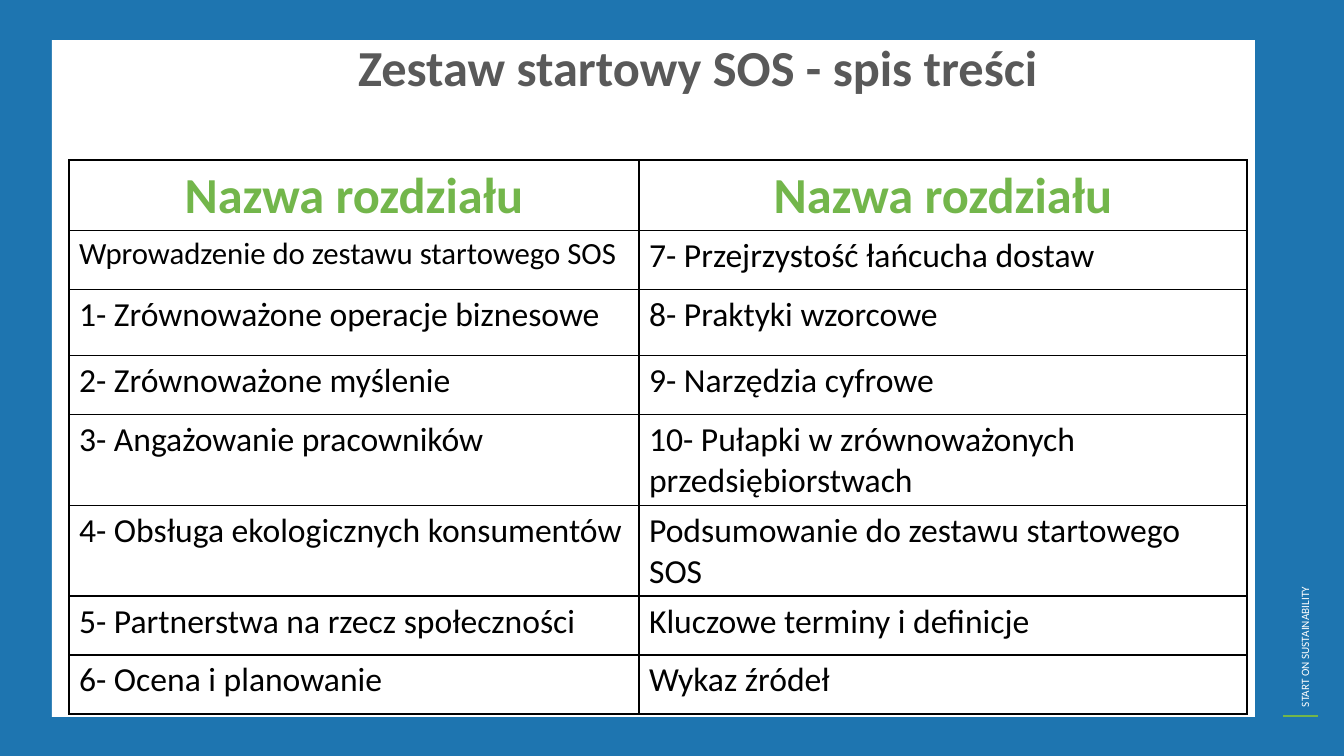
from lxml import etree
from pptx import Presentation
from pptx.dml.color import RGBColor
from pptx.enum.shapes import MSO_CONNECTOR, MSO_SHAPE
from pptx.enum.text import PP_ALIGN
from pptx.oxml.ns import qn
from pptx.util import Emu, Pt

LEFT, CENTER = PP_ALIGN.LEFT, PP_ALIGN.CENTER
RECT, LINE = MSO_SHAPE.RECTANGLE, MSO_CONNECTOR.STRAIGHT
FONT = "Calibri"
BLUE, WHITE, GREEN = "1E75B0", "FFFFFF", "73B64B"
GRAY, BLACK, EDGE = "595959", "010101", "000000"
WIDE, HIGH = 1344, 756

COLS = [570, 608]
ROWS = [59, 59, 66, 59, 64, 59, 59, 59]
HEAD = "Nazwa rozdziału"
PARTS = [
    ("Wprowadzenie do zestawu startowego SOS", "7- Przejrzystość łańcucha dostaw"),
    ("1- Zrównoważone operacje biznesowe", "8- Praktyki wzorcowe"),
    ("2- Zrównoważone myślenie", "9- Narzędzia cyfrowe"),
    ("3- Angażowanie pracowników", "10- Pułapki w zrównoważonych przedsiębiorstwach"),
    ("4- Obsługa ekologicznych konsumentów", "Podsumowanie do zestawu startowego SOS"),
    ("5- Partnerstwa na rzecz społeczności", "Kluczowe terminy i definicje"),
    ("6- Ocena i planowanie", "Wykaz źródeł"),
]


def px(size):
    return Emu(round(size * 914400 / 100.8))


def paint(color, code):
    color.rgb = RGBColor.from_string(code)


def write(frame, text, size, code, bold=False, align=LEFT):
    para = frame.paragraphs[0]
    para.alignment = align
    run = para.add_run()
    run.text = text
    run.font.name = FONT
    run.font.size = Pt(size)
    run.font.bold = bold
    paint(run.font.color, code)
    return para


def add_panel(slide, box, code):
    shape = slide.shapes.add_shape(RECT, *map(px, box))
    shape.shadow.inherit = False
    shape.fill.solid()
    paint(shape.fill.fore_color, code)
    shape.line.fill.background()


def add_text(slide, box, turn=0):
    shape = slide.shapes.add_textbox(*map(px, box))
    shape.rotation = turn
    shape.text_frame.word_wrap = True
    return shape.text_frame


def add_rule(slide, ends, code):
    line = slide.shapes.add_connector(LINE, *map(px, ends))
    paint(line.line.color, code)
    line.line.width = Pt(1)
    etree.SubElement(line.element.spPr, qn("a:effectLst"))


def add_title(slide, text):
    frame = add_text(slide, (134, 38, 1103, 89))
    para = write(frame, text, 36, GRAY, True, CENTER)
    para.line_spacing = 0.9
    para.space_before = Pt(10)
    props = para._p.get_or_add_pPr()
    props.set("marL", str(px(50)))
    props.set("indent", str(-px(25)))


def frame_cell(cell):
    props = cell._tc.get_or_add_tcPr()
    for side in ("lnL", "lnR", "lnT", "lnB"):
        line = etree.SubElement(props, qn("a:" + side), w=str(Pt(1)))
        fill = etree.SubElement(line, qn("a:solidFill"))
        etree.SubElement(fill, qn("a:srgbClr"), val=EDGE)
    cell.fill.background()


def add_grid(slide):
    box = (69, 160, sum(COLS), sum(ROWS))
    table = slide.shapes.add_table(len(ROWS), len(COLS), *map(px, box)).table
    table.first_row = table.horz_banding = False
    for col, width in zip(table.columns, COLS):
        col.width = px(width)
    for row, height in zip(table.rows, ROWS):
        row.height = px(height)
    for r, texts in enumerate([(HEAD, HEAD), *PARTS]):
        for c, text in enumerate(texts):
            cell = table.cell(r, c)
            frame_cell(cell)
            if r == 0:
                write(cell.text_frame, text, 36, GREEN, True, CENTER)
            else:
                size = 22 if (r, c) == (1, 0) else 24
                write(cell.text_frame, text, size, BLACK)


def main():
    deck = Presentation()
    deck.slide_width, deck.slide_height = px(WIDE), px(HIGH)
    slide = deck.slides.add_slide(deck.slide_layouts[6])
    add_panel(slide, (0, 0, WIDE, HIGH), BLUE)
    add_panel(slide, (52, 40, 1203, 677), WHITE)
    side = add_text(slide, (1080, 480, 450, 24), 270)
    write(side, "START ON SUSTAINABILITY", 8, WHITE)
    add_rule(slide, (1283, 716, 1318, 716), GREEN)
    add_title(slide, "Zestaw startowy SOS - spis treści")
    add_grid(slide)
    deck.save("out.pptx")


if __name__ == "__main__":
    main()
